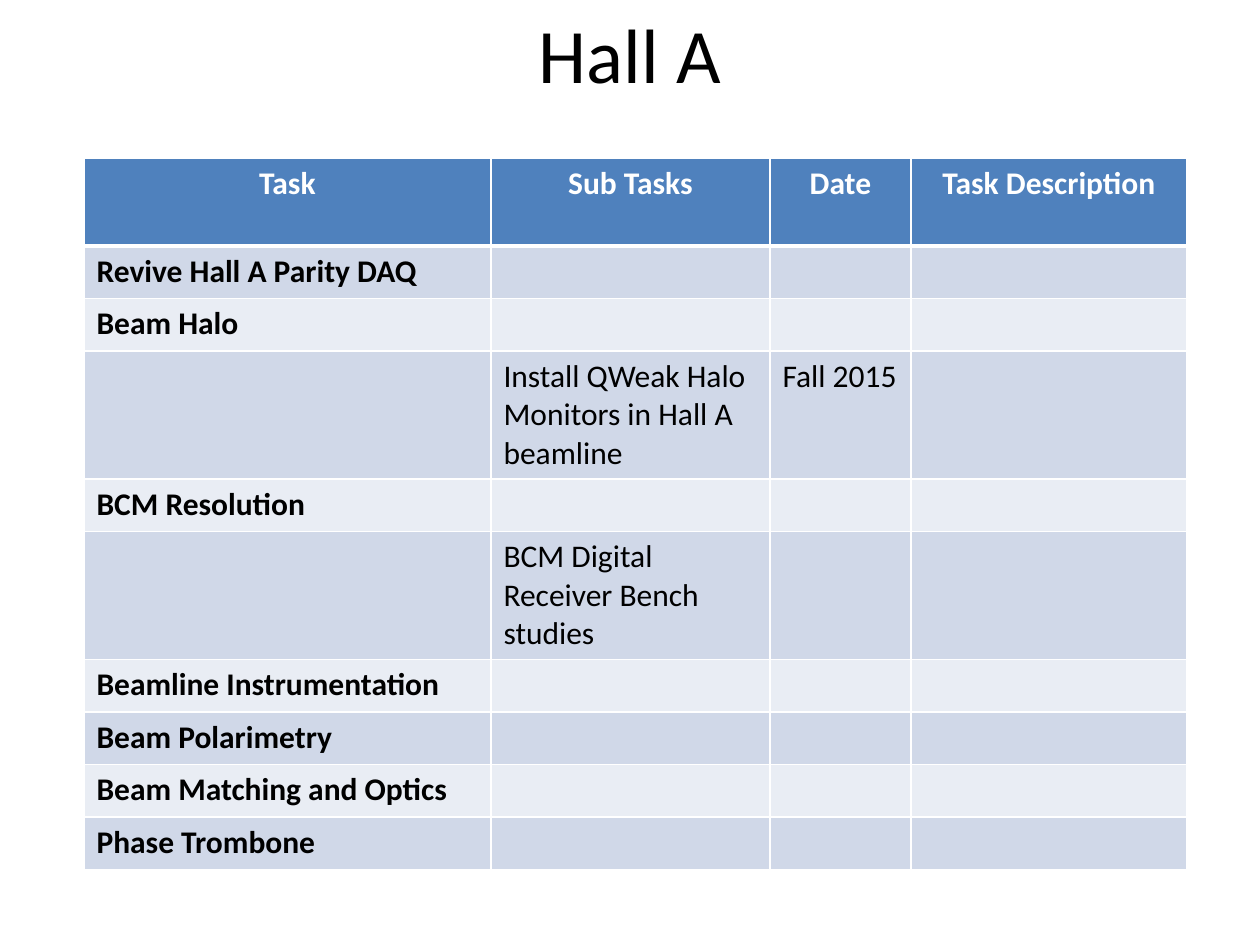
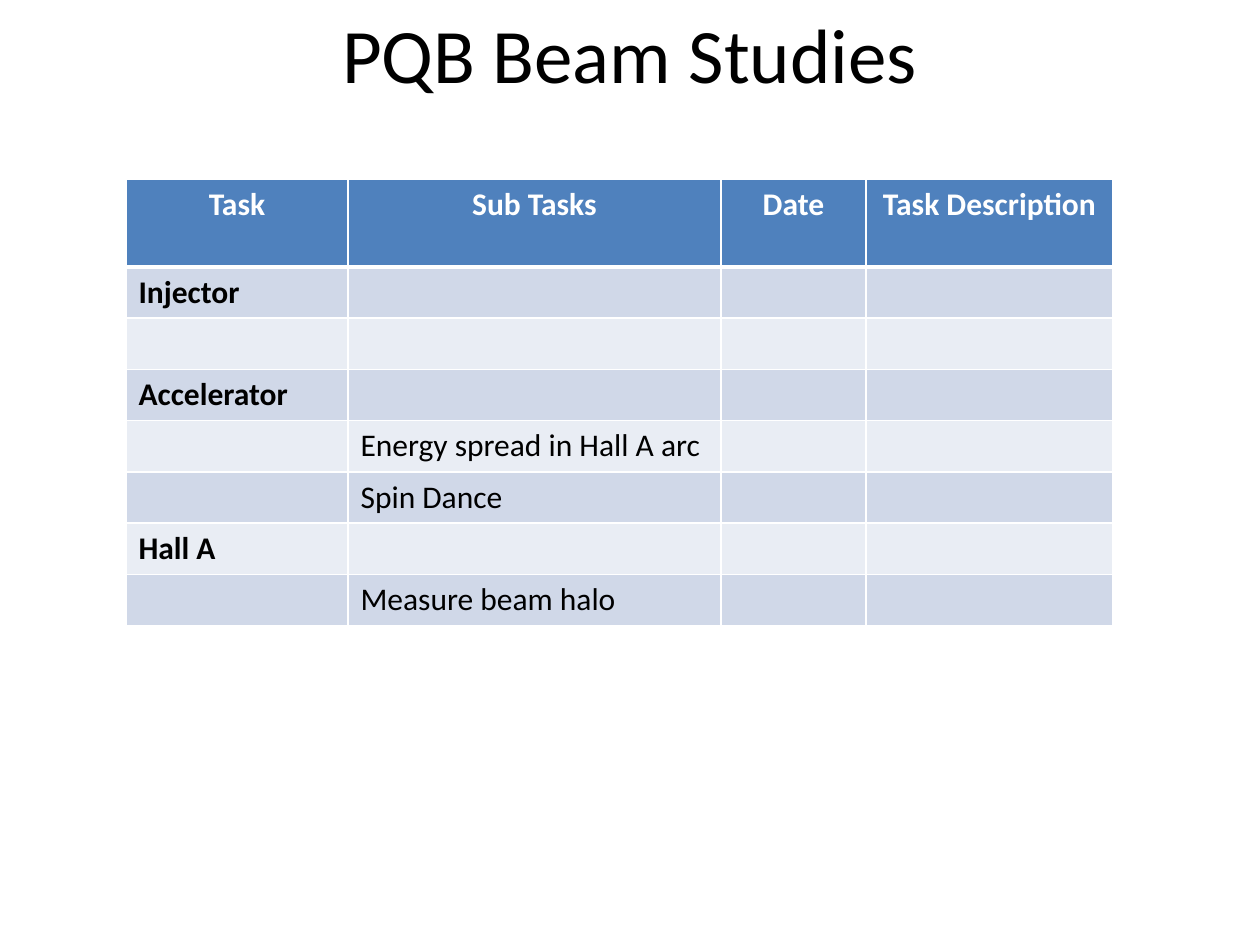
from lxml.etree import SubElement
from pptx import Presentation
from pptx.dml.color import RGBColor
from pptx.enum.text import MSO_ANCHOR, PP_ALIGN
from pptx.oxml.ns import qn
from pptx.util import Pt

# Content: a body row is (task, sub task, date); tall maps a row to its height
HEADERS = ("Task", "Sub Tasks", "Date", "Task Description")
SLIDES = [
    dict(title="Hall A", left=84, top=158, height=712,
         cols=(407, 279, 141, 276), tall={3: 128, 5: 128},
         rows=[
             ("Revive Hall A Parity DAQ",),
             ("Beam Halo",),
             ("", "Install QWeak Halo Monitors in Hall A beamline", "Fall 2015"),
             ("BCM Resolution",),
             ("", "BCM Digital Receiver Bench studies"),
             ("Beamline Instrumentation",),
             ("Beam Polarimetry",),
             ("Beam Matching and Optics",),
             ("Phase Trombone",),
         ]),
    dict(title="PQB Beam Studies", left=126, top=179, height=447,
         cols=(222, 373, 145, 247), tall={},
         rows=[
             ("Injector",),
             (),
             ("Accelerator",),
             ("", "Energy spread in Hall A arc"),
             ("", "Spin Dance"),
             ("Hall A",),
             ("", "Measure beam halo"),
         ]),
]

# Shared look
PX = 914400 / 126
HEADER_H = 88
TITLE_BOX = (63, 0, 1134, 105)
WHITE, BLACK, BLUE = "FFFFFF", "000000", "4F81BD"
BANDS = ("E9EDF4", "D0D8E8")
TITLE = dict(name="Calibri", size=Pt(44), bold=False, color=BLACK)
HEAD = dict(name="Calibri", size=Pt(18), bold=True, color=WHITE)
TASK = dict(HEAD, color=BLACK)
DETAIL = dict(TASK, bold=False)


def px(n):
    return round(n * PX)


def rgb(hex_color):
    return RGBColor.from_string(hex_color)


def write(tf, text, fmt, align):
    p = tf.paragraphs[0]
    p.alignment = align
    r = p.add_run()
    r.text = text
    for key, value in fmt.items():
        if key == "color":
            r.font.color.rgb = rgb(value)
        else:
            setattr(r.font, key, value)


def add_borders(cell, row):
    """White rules, thick between the header and the body."""
    tcPr = cell._tc.get_or_add_tcPr()
    widths = dict(lnL=1, lnR=1, lnT=3 if row == 1 else 1, lnB=3 if row == 0 else 1)
    for tag, width in widths.items():
        ln = SubElement(tcPr, qn(f"a:{tag}"), w=str(Pt(width)))
        SubElement(SubElement(ln, qn("a:solidFill")), qn("a:srgbClr"), val=WHITE)


def add_title(s, text):
    tf = s.shapes.add_textbox(*map(px, TITLE_BOX)).text_frame
    tf.word_wrap = True
    tf.vertical_anchor = MSO_ANCHOR.MIDDLE
    write(tf, text, TITLE, PP_ALIGN.CENTER)


def add_task_table(s, left, top, height, cols, tall, rows):
    grid = [HEADERS, *rows]
    fixed = {0: HEADER_H, **tall}
    # Rows without a fixed height share what is left
    row_h = (height - sum(fixed.values())) / (len(grid) - len(fixed))
    table = s.shapes.add_table(len(grid), len(cols),
                               *map(px, (left, top, sum(cols), height))).table
    for column, width in zip(table.columns, cols):
        column.width = px(width)
    for i, texts in enumerate(grid):
        table.rows[i].height = px(fixed.get(i, row_h))
        for j in range(len(cols)):
            cell = table.cell(i, j)
            add_borders(cell, i)
            cell.fill.solid()
            cell.fill.fore_color.rgb = rgb(BANDS[i % 2] if i else BLUE)
            if j < len(texts) and texts[j]:
                fmt = HEAD if i == 0 else TASK if j == 0 else DETAIL
                align = PP_ALIGN.LEFT if i else PP_ALIGN.CENTER
                write(cell.text_frame, texts[j], fmt, align)


def main():
    prs = Presentation()
    prs.slide_width, prs.slide_height = px(1260), px(945)
    for content in SLIDES:
        s = prs.slides.add_slide(prs.slide_layouts[6])
        add_title(s, content["title"])
        add_task_table(s, **{k: v for k, v in content.items() if k != "title"})
    prs.save("out.pptx")


if __name__ == "__main__":
    main()
